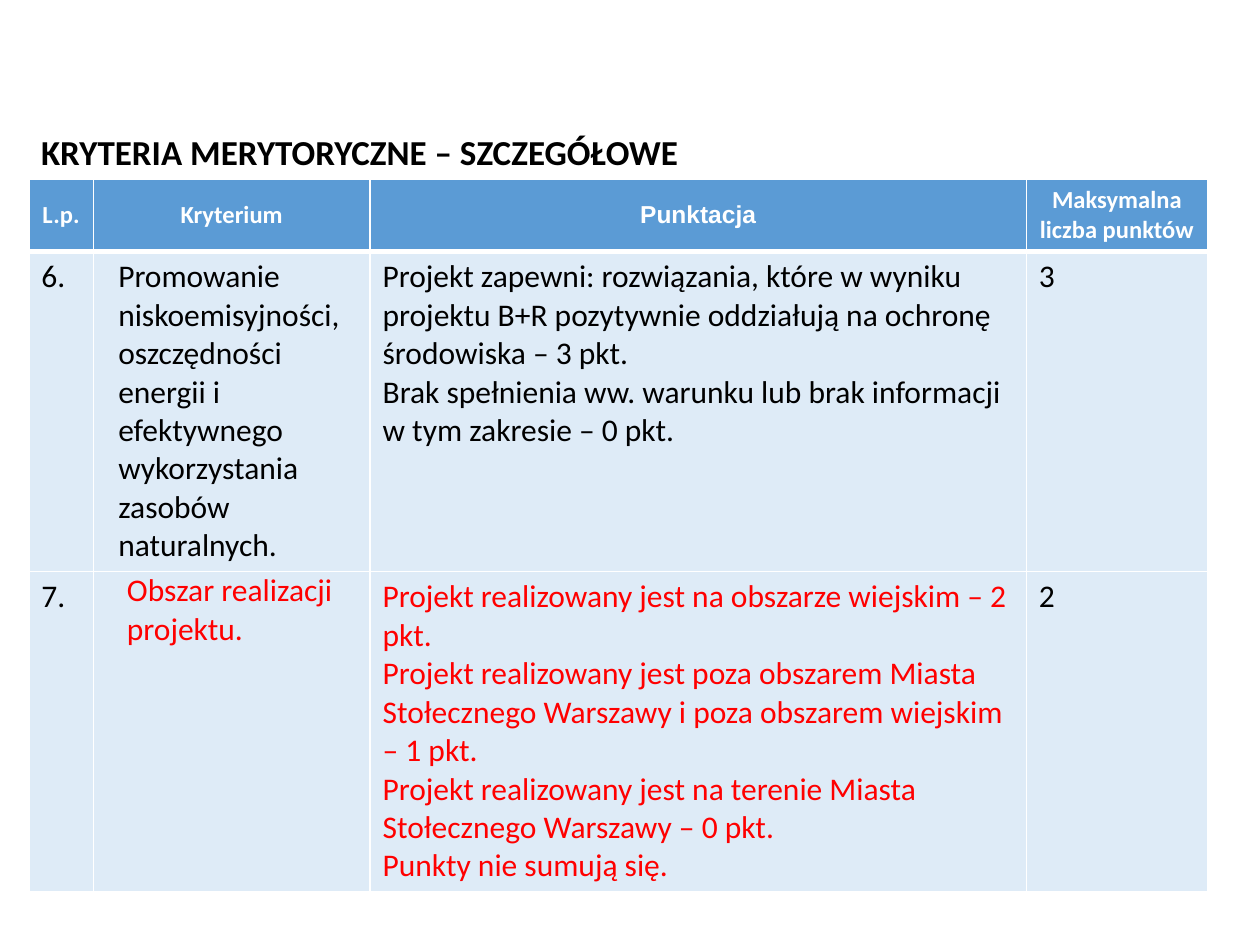
from lxml import etree
from pptx import Presentation
from pptx import util as u
from pptx.dml.color import RGBColor
from pptx.enum import text
from pptx.oxml import ns

Cm, Pt = u.Cm, u.Pt
COLORS = {
    "header": "5B9BD5",
    "body": "DEEBF7",
    "white": "FFFFFF",
    "black": "000000",
    "red": "FF0000",
}
LEFT = Cm(0.58)
COLUMN_WIDTHS = [1.3, 5.58, 13.23, 3.65]
ROW_HEIGHTS = [1.42, 6.45, 6.45]
HEADERS = ["L.p.", "Kryterium", "Punktacja", "Maksymalna liczba punktów"]
CRITERIA = [
    (
        ["6."],
        ["Promowanie niskoemisyjności, oszczędności energii i efektywnego "
         "wykorzystania zasobów naturalnych."],
        ["Projekt zapewni: rozwiązania, które w wyniku projektu B+R pozytywnie "
         "oddziałują na ochronę środowiska – 3 pkt.",
         "Brak spełnienia ww. warunku lub brak informacji w tym zakresie – 0 pkt."],
        ["3"],
    ),
    (
        ["7."],
        ["Obszar realizacji projektu."],
        ["Projekt realizowany jest na obszarze wiejskim – 2 pkt.",
         "Projekt realizowany jest poza obszarem Miasta Stołecznego Warszawy "
         "i poza obszarem wiejskim – 1 pkt.",
         "Projekt realizowany jest na terenie Miasta Stołecznego Warszawy – 0 pkt.",
         "Punkty nie sumują się."],
        ["2"],
    ),
]


def rgb(name):
    return RGBColor.from_string(COLORS[name])


def write(frame, lines, size, color, bold=False, font="Calibri", align=None, indent=0):
    """Fill a text frame with one paragraph per line."""
    for index, line in enumerate(lines):
        para = frame.add_paragraph() if index else frame.paragraphs[0]
        para.alignment = align
        if indent:
            properties = para._p.get_or_add_pPr()
            properties.set("marL", str(Cm(indent)))
            properties.set("indent", "0")
        span = para.add_run()
        span.text = line
        span.font.name = font
        span.font.size = Pt(size)
        span.font.bold = bold
        span.font.color.rgb = rgb(color)


def style_cell(cell, fill, top=1, bottom=1):
    """Give a cell white borders and a solid fill."""
    properties = cell._tc.get_or_add_tcPr()
    for side, width in (("L", 1), ("R", 1), ("T", top), ("B", bottom)):
        line = etree.SubElement(properties, ns.qn(f"a:ln{side}"), w=str(Pt(width)))
        solid = etree.SubElement(line, ns.qn("a:solidFill"))
        etree.SubElement(solid, ns.qn("a:srgbClr"), val=COLORS["white"])
    cell.fill.solid()
    cell.fill.fore_color.rgb = rgb(fill)


def add_title(page):
    box = page.shapes.add_textbox(LEFT, Cm(2.49), Cm(13.77), Cm(1.12))
    frame = box.text_frame
    frame.word_wrap = False
    frame.auto_size = text.MSO_AUTO_SIZE.SHAPE_TO_FIT_TEXT
    frame.vertical_anchor = text.MSO_ANCHOR.MIDDLE
    write(frame, ["KRYTERIA MERYTORYCZNE – SZCZEGÓŁOWE"], 20, "black", bold=True)


def add_criteria_table(page):
    holder = page.shapes.add_table(
        len(ROW_HEIGHTS), len(COLUMN_WIDTHS), LEFT, Cm(3.61),
        Cm(sum(COLUMN_WIDTHS)), Cm(sum(ROW_HEIGHTS)))
    table = holder.table
    for column, width in zip(table.columns, COLUMN_WIDTHS):
        column.width = Cm(width)
    for row, height in zip(table.rows, ROW_HEIGHTS):
        row.height = Cm(height)

    # Header row
    for index, label in enumerate(HEADERS):
        cell = table.cell(0, index)
        style_cell(cell, "header", bottom=3)
        cell.vertical_anchor = text.MSO_ANCHOR.MIDDLE
        write(cell.text_frame, [label], 14, "white", bold=True,
              font="Arial" if label == "Punktacja" else "Calibri",
              align=text.PP_ALIGN.CENTER)

    # Criteria rows; the last one has its criterion and scoring in red
    indents = {(1, 1): 0.25, (2, 1): 0.5}
    for row, entries in enumerate(CRITERIA, start=1):
        for column, lines in enumerate(entries):
            cell = table.cell(row, column)
            style_cell(cell, "body", top=3 if row == 1 else 1)
            red = row == 2 and column in (1, 2)
            write(cell.text_frame, lines, 18, "red" if red else "black",
                  align=text.PP_ALIGN.JUSTIFY if column == 0 else None,
                  indent=indents.get((row, column), 0))

    area = table.cell(2, 1)
    area.margin_left = area.margin_right = Cm(0.18)
    area.margin_top = area.margin_bottom = 0


def main():
    deck = Presentation()
    deck.slide_width, deck.slide_height = Cm(25.4), Cm(19.05)
    page = deck.slides.add_slide(deck.slide_layouts[6])
    add_criteria_table(page)
    add_title(page)
    deck.save("out.pptx")


if __name__ == "__main__":
    main()
